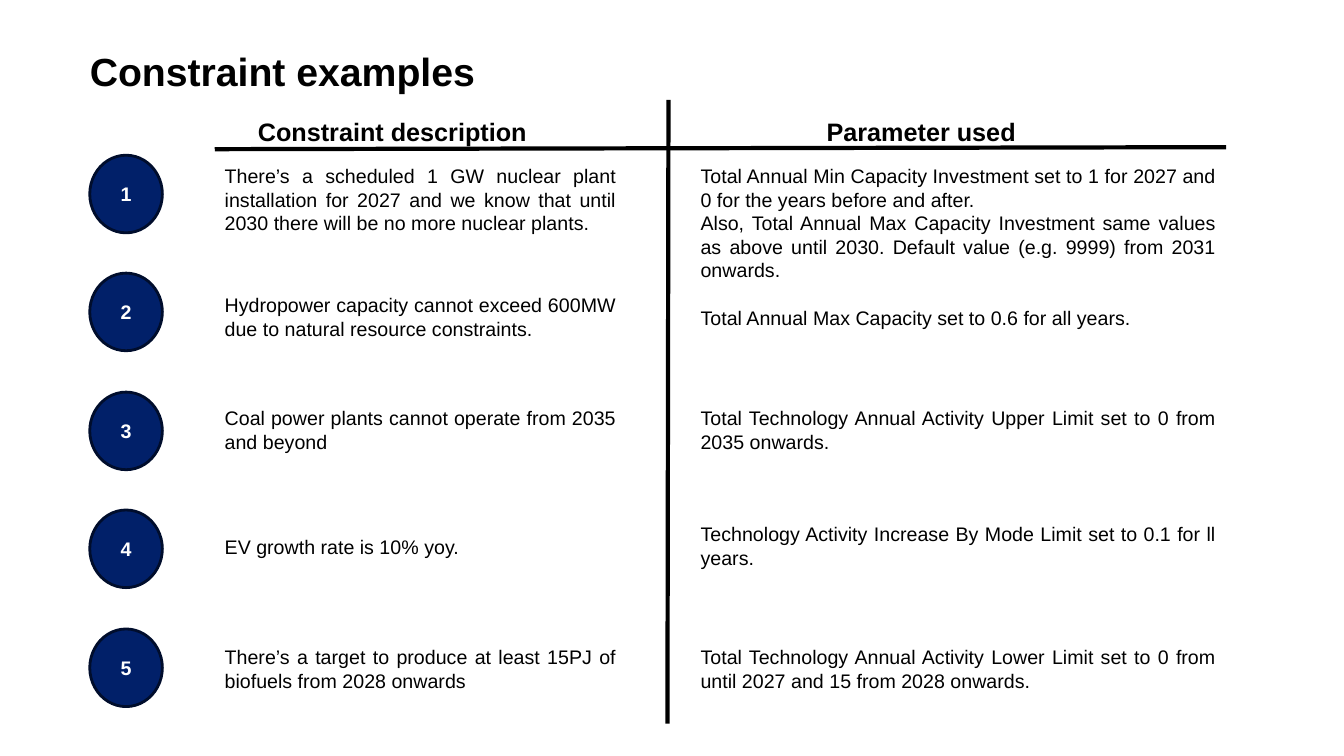
from lxml import etree
from pptx import Presentation
from pptx import util as u
from pptx.dml.color import RGBColor
from pptx.enum import shapes, text
from pptx.oxml.ns import qn

PX = 9144
BLACK, WHITE, NAVY, NAVY_EDGE = "000000", "FFFFFF", "012069", "000D2C"


def rgb(value):
    return RGBColor.from_string(value)


def px(*lengths):
    return [u.Emu(length * PX) for length in lengths]


class ConstraintSlide:
    font = "Arial"

    def __init__(self, deck):
        self.slide = deck.slides.add_slide(deck.slide_layouts[5])

    def set_words(self, frame, wording, size, color=BLACK, bold=False, align=None):
        frame.text = wording
        frame.word_wrap = True
        for paragraph in frame.paragraphs:
            paragraph.alignment = align
            for run in paragraph.runs:
                run.font.name = self.font
                run.font.size = u.Pt(size)
                run.font.bold = bold
                run.font.color.rgb = rgb(color)

    def title(self, wording, left, top, width, height):
        heading = self.slide.shapes.title
        heading.left, heading.top, heading.width, heading.height = px(left, top, width, height)
        frame = heading.text_frame
        self.set_words(frame, wording, 28, bold=True, align=text.PP_ALIGN.LEFT)
        frame.auto_size = text.MSO_AUTO_SIZE.NONE
        frame.vertical_anchor = text.MSO_ANCHOR.BOTTOM
        frame.paragraphs[0].line_spacing = 0.9

    def label(self, wording, left, top, width, height, size=14, bold=False):
        frame = self.slide.shapes.add_textbox(*px(left, top, width, height)).text_frame
        self.set_words(frame, wording, size, bold=bold, align=text.PP_ALIGN.JUSTIFY)
        frame.auto_size = text.MSO_AUTO_SIZE.SHAPE_TO_FIT_TEXT

    def badge(self, number, left, top, width, height):
        circle = self.slide.shapes.add_shape(
            shapes.MSO_SHAPE.OVAL, *px(left, top, width, height))
        circle.shadow.inherit = False
        circle.fill.solid()
        circle.fill.fore_color.rgb = rgb(NAVY)
        circle.line.color.rgb = rgb(NAVY_EDGE)
        circle.line.width = u.Pt(2)
        circle.text_frame.vertical_anchor = text.MSO_ANCHOR.MIDDLE
        self.set_words(circle.text_frame, str(number), 14, WHITE, True, text.PP_ALIGN.CENTER)

    def rule(self, *ends):
        line = self.slide.shapes.add_connector(shapes.MSO_CONNECTOR.STRAIGHT, *px(*ends))
        line.line.color.rgb = rgb(BLACK)
        line.line.width = u.Pt(3)
        etree.SubElement(line._element.spPr, qn("a:effectLst"))


DESCRIPTIONS = [
    (158, 81, "There’s a scheduled 1 GW nuclear plant installation for 2027 "
              "and we know that until 2030 there will be no more nuclear plants."),
    (286, 57, "Hydropower capacity cannot exceed 600MW due to natural resource constraints."),
    (398, 57, "Coal power plants cannot operate from 2035 and beyond"),
    (526, 34, "EV growth rate is 10% yoy."),
    (635, 57, "There’s a target to produce at least 15PJ of biofuels from 2028 onwards"),
]
PARAMETERS = [
    (158, 128, "Total Annual Min Capacity Investment set to 1 for 2027 and 0 for the "
               "years before and after.\n"
               "Also, Total Annual Max Capacity Investment same values as above until 2030. "
               "Default value (e.g. 9999) from 2031 onwards."),
    (299, 34, "Total Annual Max Capacity set to 0.6 for all years."),
    (398, 57, "Total Technology Annual Activity Upper Limit set to 0 from 2035 onwards."),
    (513, 57, "Technology Activity Increase By Mode Limit set to 0.1 for ll years."),
    (635, 57, "Total Technology Annual Activity Lower Limit set to 0 from until 2027 "
              "and 15 from 2028 onwards."),
]
COLUMNS = [
    ("Constraint description", 246, 213, 408, DESCRIPTIONS),
    ("Parameter used", 810, 685, 531, PARAMETERS),
]


def main():
    deck = Presentation()
    deck.slide_width, deck.slide_height = px(1333, 750)
    page = ConstraintSlide(deck)
    page.title("Constraint examples", 79, -25, 1150, 124)
    for index in range(len(DESCRIPTIONS)):
        page.badge(index + 1, 89, 154 + index * 235 // 2, 72, 77)
    for heading, heading_left, left, width, entries in COLUMNS:
        page.label(heading, heading_left, 111, 338, 40, size=18, bold=True)
        for top, height, wording in entries:
            page.label(wording, left, top, width, height)
    page.rule(213, 148, 1216, 146)
    page.rule(663, 99, 662, 718)
    deck.save("out.pptx")


if __name__ == "__main__":
    main()
